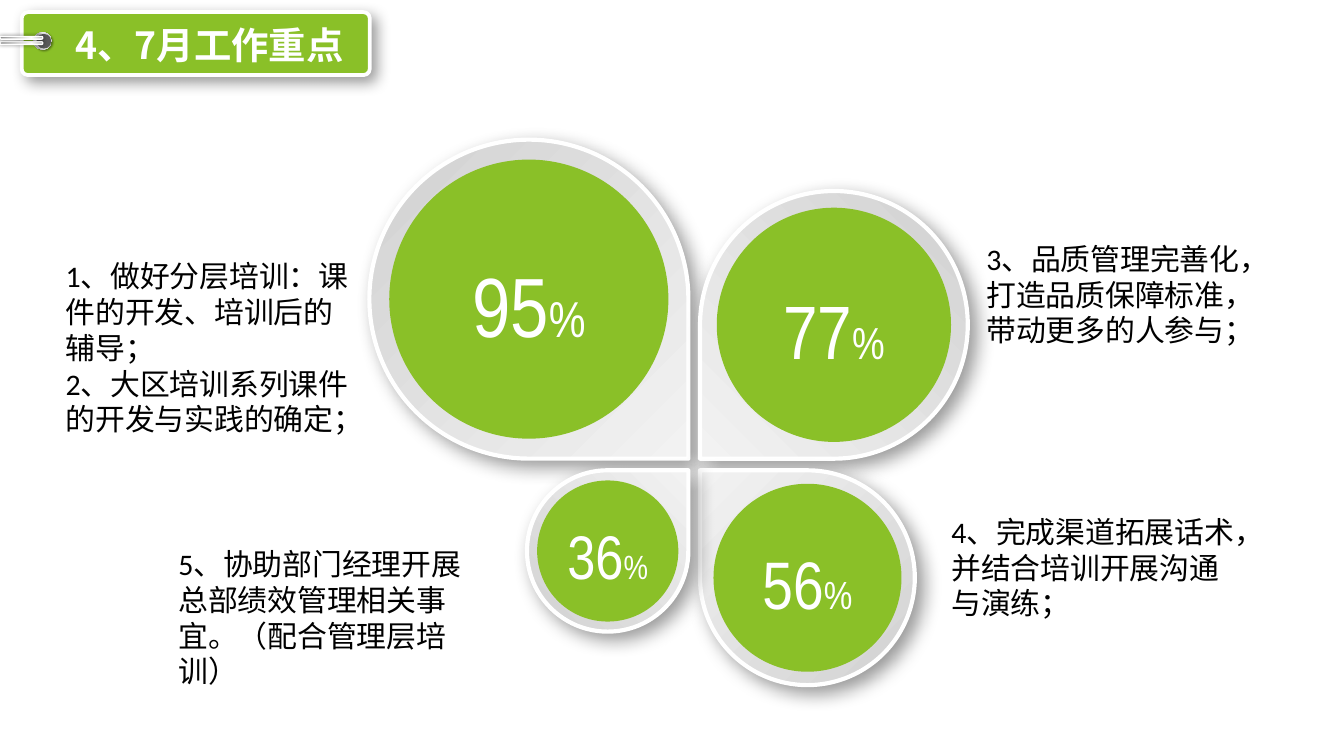
from lxml import etree
from pptx import Presentation
from pptx.dml.color import RGBColor
from pptx.enum.shapes import MSO_SHAPE
from pptx.enum.text import MSO_AUTO_SIZE, PP_ALIGN
from pptx.oxml.ns import qn
from pptx.util import Cm, Pt

OVAL, DROP = MSO_SHAPE.OVAL, MSO_SHAPE.TEAR
ROUND = MSO_SHAPE.ROUNDED_RECTANGLE
LEFT, MID = PP_ALIGN.LEFT, PP_ALIGN.CENTER
GROW = MSO_AUTO_SIZE.SHAPE_TO_FIT_TEXT

GREEN, WHITE, BLACK = "8AC028", "FFFFFF", "000000"
HAN = "Noto Sans CJK SC"
SILVER = [(0, "D1D1D1"), (100, "F2F2F2")]
STEEL = [(0, "808080"), (23, "A6A6A6"), (52, "D9D9D9"), (74, "FFFFFF"), (100, "A6A6A6")]
CHROME = [(0, "FFFFFF"), (17, "A6A6A6"), (35, "F2F2F2"), (55, "A6A6A6"),
          (75, "F2F2F2"), (100, "A6A6A6")]

# Centre of the flower and half of the gap between its petals, in cm
HUB_X, HUB_Y, GAP = 13.12, 8.78, 0.11
# Side (x, y), size, turn, value, number size, percent size, text height
PETALS = [
    (-1, -1, 6.03, 90, "95", 45, 27, 2.18),
    (1, -1, 5.06, 180, "77", 40.5, 24, 1.98),
    (1, 1, 4.06, 270, "56", 36, 21, 1.8),
    (-1, 1, 3.05, 0, "36", 33, 18, 1.68),
]
NOTES = [
    (18.39, 4.42, 2.31, ["3、品质管理完善化，打造品质保障标准，带动更多的人参与；"]),
    (0.99, 4.75, 3.68, ["1、做好分层培训：课件的开发、培训后的辅导；",
                        "2、大区培训系列课件的开发与实践的确定；"]),
    (17.73, 9.58, 2.31, ["4、完成渠道拓展话术，并结合培训开展沟通与演练；"]),
    (3.12, 10.19, 3, ["5、协助部门经理开展总部绩效管理相关事宜。（配合管理层培训）"]),
]


def color(code):
    return RGBColor.from_string(code)


def node(up, tag, **attrs):
    return etree.SubElement(up, qn(tag), {k: str(v) for k, v in attrs.items()})


def blend(shape, stops, angle):
    """Give the shape a linear gradient; stops are (percent, colour)."""
    props = shape._element.spPr
    grad = node(props, "a:gradFill", rotWithShape=1)
    props.insert(2, grad)
    items = node(grad, "a:gsLst")
    for pos, code in stops:
        node(node(items, "a:gs", pos=pos * 1000), "a:srgbClr", val=code)
    node(grad, "a:lin", ang=angle * 60000, scaled=0)


def shade(shape, blur, dist, angle):
    """Cast a soft black shadow; blur and distance are in points."""
    cast = node(shape._element.spPr.find(qn("a:effectLst")), "a:outerShdw",
                blurRad=Pt(blur), dist=Pt(dist), dir=angle * 60000,
                algn="ctr", rotWithShape=0)
    node(node(cast, "a:srgbClr", val=BLACK), "a:alpha", val=40000)


def form(slide, kind, x, y, w, h, fill=None, edge=0):
    shape = slide.shapes.add_shape(kind, Cm(x), Cm(y), Cm(w), Cm(h))
    shape.shadow.inherit = False
    if fill:
        shape.fill.solid()
        shape.fill.fore_color.rgb = color(fill)
    if edge:
        shape.line.color.rgb = color(WHITE)
        shape.line.width = Pt(edge)
    else:
        shape.line.fill.background()
    return shape


def words(slide, x, y, w, h, lines, face, ink, align=LEFT, bold=False):
    """Add a text box; each line is a list of (text, size) runs."""
    box = slide.shapes.add_textbox(Cm(x), Cm(y), Cm(w), Cm(h))
    frame = box.text_frame
    frame.word_wrap = True
    frame.auto_size = GROW
    for i, parts in enumerate(lines):
        para = frame.add_paragraph() if i else frame.paragraphs[0]
        para.alignment = align
        for text, size in parts:
            run = para.add_run()
            run.text = text
            font = run.font
            font.size, font.bold, font.name = Pt(size), bold, face
            font.color.rgb = color(ink)
            node(run._r.get_or_add_rPr(), "a:ea", typeface=HAN)


def petal(slide, side_x, side_y, size, turn, value, big, small, high):
    mid_x = HUB_X + side_x * (GAP + size / 2)
    mid_y = HUB_Y + side_y * (GAP + size / 2)
    drop = form(slide, DROP, mid_x - size / 2, mid_y - size / 2, size, size, edge=2.25)
    drop.rotation = turn
    blend(drop, SILVER, 315)
    shade(drop, 10, 5, 45)
    disc = size * 0.875
    form(slide, OVAL, mid_x - disc / 2, mid_y - disc / 2, disc, disc, GREEN)
    words(slide, mid_x - 1.45, mid_y - high / 2 + 0.1, 2.9, high,
          [[(value, big), ("%", small)]], "Arial Narrow", WHITE, MID)


def title(slide):
    tag = form(slide, ROUND, 0.41, 0.23, 6.58, 1.19, GREEN, 2)
    tag.adjustments[0] = 0.1
    shade(tag, 8, 4, 45)
    ring = form(slide, OVAL, 0.64, 0.61, 0.33, 0.33)
    blend(ring, CHROME, 315)
    shade(ring, 1, 1, 45)
    form(slide, OVAL, 0.69, 0.64, 0.28, 0.28, "595959")
    for y in (0.79, 0.69):
        pin = form(slide, ROUND, 0, y, 0.81, 0.05, edge=0.75)
        pin.adjustments[0] = 0.5
        blend(pin, STEEL, 0)
        shade(pin, 2, 0, 0)
    words(slide, 0.53, 0.3, 6.86, 1.12, [[("4、7月工作重点", 20)]], HAN, WHITE, MID, True)


def main():
    deck = Presentation()
    deck.slide_width, deck.slide_height = Cm(25.4), Cm(14.29)
    slide = deck.slides.add_slide(deck.slide_layouts[6])
    title(slide)
    for item in PETALS:
        petal(slide, *item)
    for x, y, high, lines in NOTES:
        words(slide, x, y, 6.02, high, [[(line, 16)] for line in lines], "Calibri", BLACK)
    deck.save("out.pptx")


if __name__ == "__main__":
    main()
